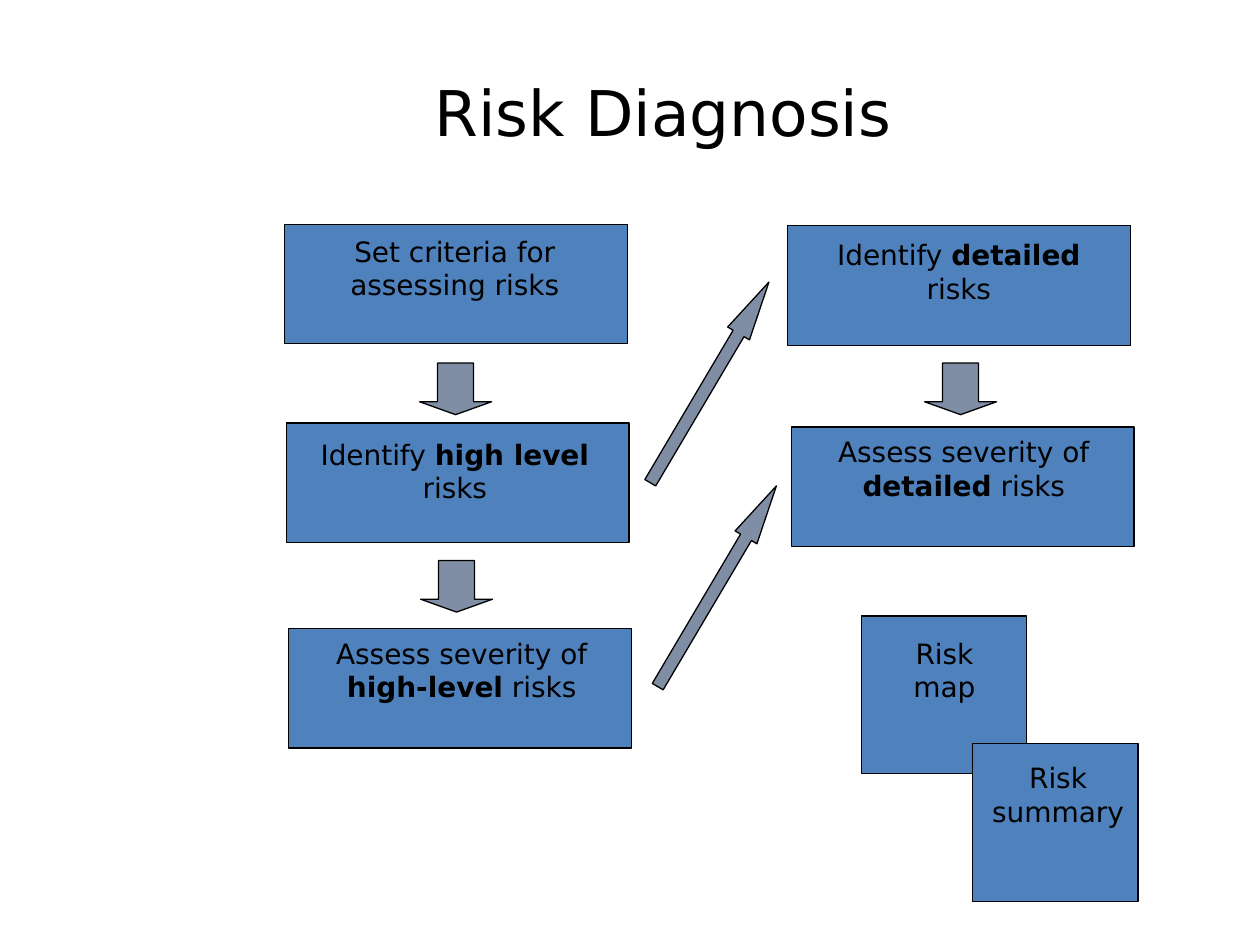
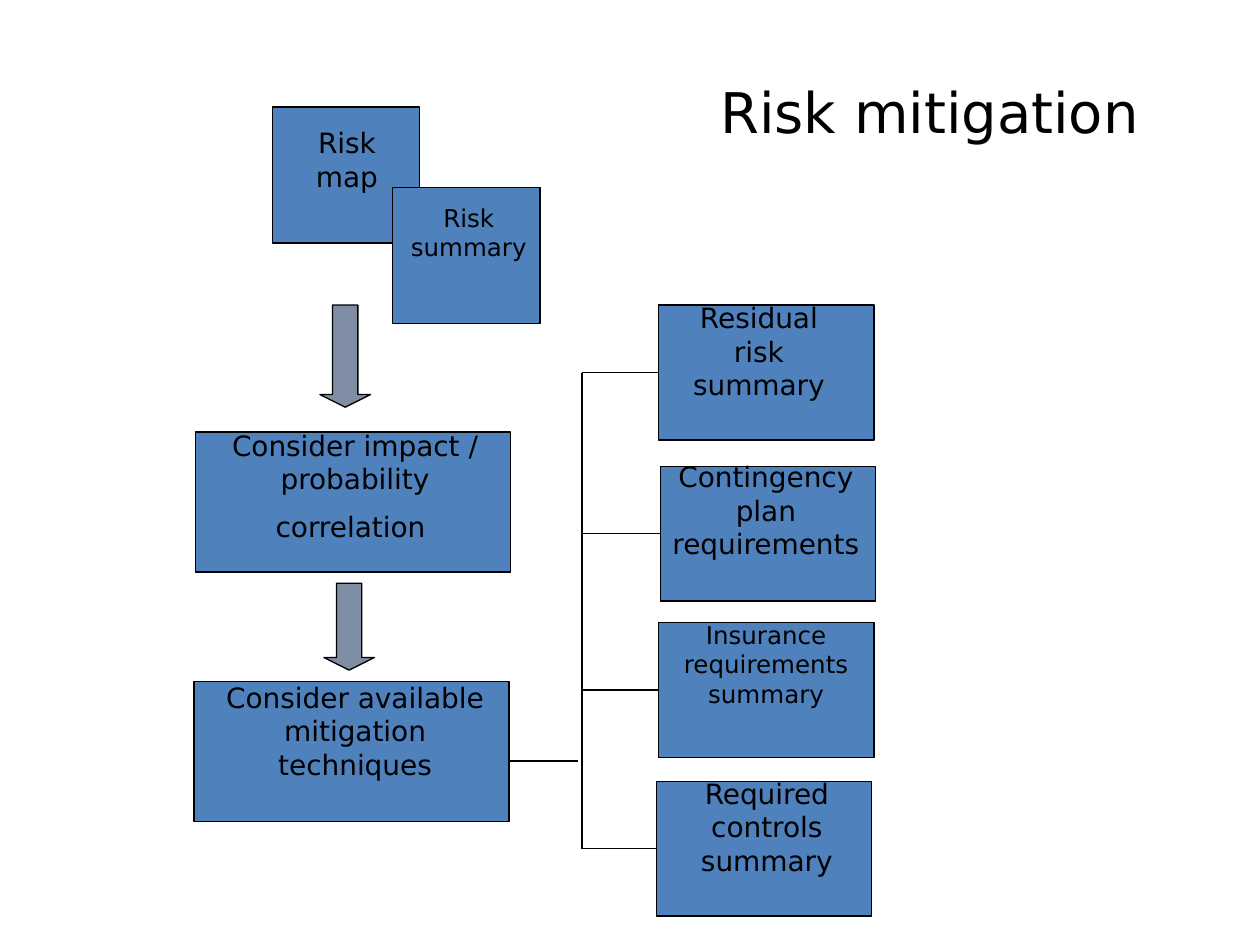
from pptx import Presentation
from pptx.dml.color import RGBColor
from pptx.enum.shapes import MSO_CONNECTOR, MSO_SHAPE
from pptx.enum.text import MSO_ANCHOR, MSO_AUTO_SIZE, PP_ALIGN
from pptx.util import Cm, Pt
from lxml.etree import SubElement
from pptx.oxml.ns import qn

# Shared look
BLACK = RGBColor(0x00, 0x00, 0x00)
BOX_BLUE = RGBColor(0x4F, 0x81, 0xBD)
ARROW_GREY = RGBColor(0x7F, 0x8E, 0xA5)
FONT = "DejaVu Sans"
LINE_WIDTH = Pt(0.75)
FRAME_FORMAT = {"word_wrap": True, "auto_size": MSO_AUTO_SIZE.NONE}
LEFT, RIGHT_SIDE = 1, 3

deck = Presentation()
deck.slide_width, deck.slide_height = Cm(25.4), Cm(19.05)
blank_layout = deck.slide_layouts[6]


def add_outlined(page, kind, colour, left, top, width, height):
    """Add a filled preset shape with a thin black outline."""
    shape = page.shapes.add_shape(kind, Cm(left), Cm(top), Cm(width), Cm(height))
    shape.shadow.inherit = False
    shape.fill.solid()
    shape.fill.fore_color.rgb = colour
    shape.line.color.rgb = BLACK
    shape.line.width = LINE_WIDTH
    return shape


def add_text(page, text, size, left, top, width, height, anchor=MSO_ANCHOR.TOP):
    """Add centred text; parts between bars are bold."""
    box = page.shapes.add_textbox(Cm(left), Cm(top), Cm(width), Cm(height))
    for name, value in {**FRAME_FORMAT, "vertical_anchor": anchor}.items():
        setattr(box.text_frame, name, value)
    para = box.text_frame.paragraphs[0]
    para.alignment = PP_ALIGN.CENTER
    for index, part in enumerate(text.split("|")):
        span = para.add_run()
        span.text = part
        for name, value in {"name": FONT, "size": Pt(size), "bold": index % 2 == 1}.items():
            setattr(span.font, name, value)
        span.font.color.rgb = BLACK
    return para


# Slide 1: Risk Diagnosis
diagnosis = deck.slides.add_slide(blank_layout)
add_text(diagnosis, "Risk Diagnosis", 36, 3.25, 1.32, 20.24, 1.83, MSO_ANCHOR.MIDDLE)

# Steps: wording, box corner, text corner and text width
diagnosis_steps = [
    ("Set criteria for assessing risks", 5.74, 4.52, 6.2, 4.6, 5.94),
    ("Identify |high level| risks", 5.77, 8.53, 6.2, 8.69, 5.94),
    ("Assess severity of |high-level| risks", 5.82, 12.67, 5.82, 12.7, 6.98),
    ("Identify |detailed| risks", 15.88, 4.55, 16.36, 4.67, 5.94),
    ("Assess severity of |detailed| risks", 15.95, 8.61, 16.46, 8.64, 5.94),
]
for wording, left, top, text_left, text_top, text_width in diagnosis_steps:
    add_outlined(diagnosis, MSO_SHAPE.RECTANGLE, BOX_BLUE, left, top, 6.91, 2.41)
    add_text(diagnosis, wording, 16, text_left, text_top, text_width, 1.63)

# Arrows down each column
for left, top in [(8.46, 7.32), (8.48, 11.3), (18.64, 7.32)]:
    add_outlined(diagnosis, MSO_SHAPE.DOWN_ARROW, ARROW_GREY, left, top, 1.45, 1.04).adjustments[1] = 0.25

# Slanted arrows from the high-level to the detailed column
for left, top in [(14.05, 5.36), (14.2, 9.47)]:
    arrow = add_outlined(diagnosis, MSO_SHAPE.UP_ARROW, ARROW_GREY, left, top, 0.51, 4.7)
    arrow.adjustments[1] = 2.36
    arrow.rotation = 30.6

# Resulting documents
for wording, left, top, text_left, text_top, text_width in [
    ("Risk map", 17.37, 12.42, 17.86, 12.7, 2.36),
    ("Risk summary", 19.61, 14.99, 19.41, 15.21, 3.84),
]:
    add_outlined(diagnosis, MSO_SHAPE.RECTANGLE, BOX_BLUE, left, top, 3.33, 3.18)
    add_text(diagnosis, wording, 16, text_left, text_top, text_width, 1.63)

# Slide 2: Risk mitigation
mitigation = deck.slides.add_slide(blank_layout)
add_text(mitigation, "Risk mitigation", 32, 12.09, 1.32, 13.31, 1.83, MSO_ANCHOR.MIDDLE)

# Incoming documents
for wording, size, left, top, text_left, text_top, text_width in [
    ("Risk map", 16, 5.49, 2.16, 5.94, 2.41, 2.11),
    ("Risk summary", 14, 7.92, 3.78, 7.75, 3.96, 3.4),
]:
    add_outlined(mitigation, MSO_SHAPE.RECTANGLE, BOX_BLUE, left, top, 2.97, 2.74)
    add_text(mitigation, wording, size, text_left, text_top, text_width, 1.63)

# Considerations
considerations = []
for wording, left, top, text_top in [
    ("Consider impact / probability correlation", 3.94, 8.71, 8.51),
    ("Consider available mitigation techniques", 3.91, 13.74, 13.59),
]:
    add_outlined(mitigation, MSO_SHAPE.RECTANGLE, BOX_BLUE, left, top, 6.35, 2.82)
    considerations.append(add_text(mitigation, wording, 16, 4.01, text_top, 6.3, 2.29))

# A larger closing space deepens the last line of the first consideration
span = considerations[0].add_run()
span.text = " "
for name, value in {"name": "Cambria", "size": Pt(24)}.items():
    setattr(span.font, name, value)

# Arrows between considerations
for left, top, height in [(6.45, 6.15, 2.06), (6.53, 11.76, 1.75)]:
    add_outlined(mitigation, MSO_SHAPE.DOWN_ARROW, ARROW_GREY, left, top, 1.02, height).adjustments[1] = 0.25

# Outputs
output_boxes = []
for wording, size, left, top, text_left, text_top, text_width in [
    ("Residual risk summary", 16, 13.28, 6.15, 13.51, 5.94, 3.58),
    ("Contingency plan requirements", 16, 13.31, 9.4, 13, 9.14, 4.88),
    ("Insurance requirements summary", 14, 13.28, 12.55, 13.16, 12.37, 4.57),
    ("Required controls summary", 16, 13.23, 15.75, 13.67, 15.52, 3.58),
]:
    output_boxes.append(add_outlined(mitigation, MSO_SHAPE.RECTANGLE, BOX_BLUE, left, top, 4.34, 2.72))
    add_text(mitigation, wording, size, text_left, text_top, text_width, 2.29)

# Bracket: stub, trunk and one branch to each output
trunk_x = Cm(11.73)
middles = [box.top + box.height // 2 for box in output_boxes]
bracket_lines = [
    (Cm(10.24), Cm(15.34), Cm(11.66), Cm(15.34), None),
    (trunk_x, middles[0], trunk_x, middles[-1], None),
]
for box, middle in zip(output_boxes, middles):
    bracket_lines.append((trunk_x, middle, box.left, middle, box))
for start_x, start_y, end_x, end_y, box in bracket_lines:
    connector = mitigation.shapes.add_connector(MSO_CONNECTOR.STRAIGHT, start_x, start_y, end_x, end_y)
    if box is not None:
        connector.end_connect(box, LEFT)
    connector.line.color.rgb = BLACK
    connector.line.width = LINE_WIDTH
    SubElement(connector._element.spPr, qn("a:effectLst"))

deck.save("out.pptx")
